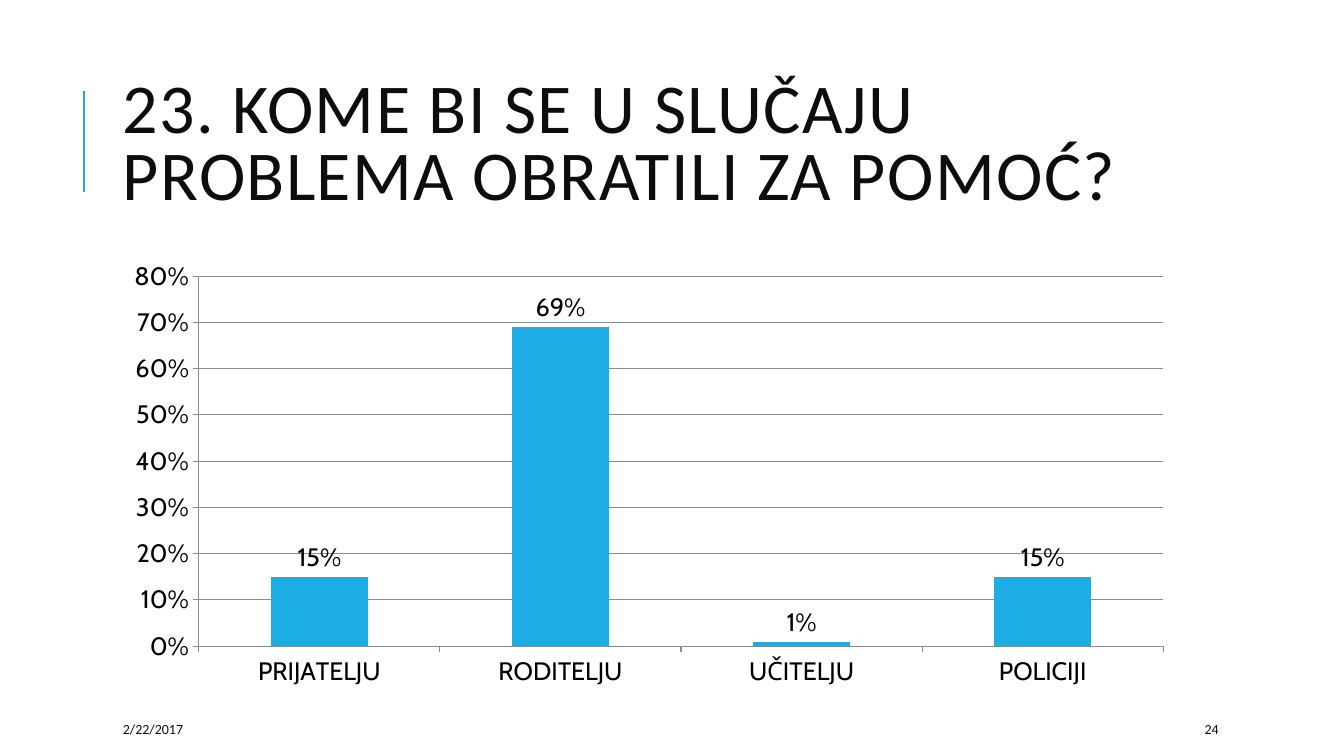
from dataclasses import dataclass

from pptx import Presentation
from pptx.chart.data import CategoryChartData
from pptx.dml.color import RGBColor
from pptx.enum.chart import XL_CHART_TYPE as ChartType
from pptx.enum.chart import XL_LABEL_POSITION as LabelPosition
from pptx.enum.chart import XL_TICK_MARK as TickMark
from pptx.enum.shapes import MSO_CONNECTOR as Connector
from pptx.enum.text import MSO_ANCHOR as Anchor
from pptx.oxml.ns import qn
from pptx.slide import Slide
from pptx.util import Inches, Pt

ACCENT = "1CADE4"
TEXT = "0D0D0D"
CHART_TEXT = "000000"
GRID = "8B8B8B"
LEFT = 1.12
CONTENT_WIDTH = 10.63
ANSWERS = {"PRIJATELJU": 0.15, "RODITELJU": 0.69, "UČITELJU": 0.01, "POLICIJI": 0.15}


@dataclass
class Label:
    text: str
    left: float
    top: float
    width: float
    height: float
    size: float
    line_spacing: float = 1.0
    tracking: int = 0  # hundredths of a point


LABELS = [
    Label("23. KOME BI SE U SLUČAJU PROBLEMA OBRATILI ZA POMOĆ?",
          LEFT, 0.64, CONTENT_WIDTH, 1.64, 50, 0.8, 100),
    Label("2/22/2017", LEFT, 7.08, 2.36, 0.3, 10),
    Label("24", 11.85, 7.08, 1.06, 0.3, 10),
]


def color(value: str) -> RGBColor:
    return RGBColor.from_string(value)


def add_label(slide: Slide, label: Label) -> None:
    shape = slide.shapes.add_textbox(Inches(label.left), Inches(label.top),
                                     Inches(label.width), Inches(label.height))
    frame = shape.text_frame
    frame.word_wrap = True
    frame.vertical_anchor = Anchor.MIDDLE
    frame.text = label.text
    paragraph = frame.paragraphs[0]
    paragraph.line_spacing = label.line_spacing
    run = paragraph.runs[0]
    run.font.name = "Calibri"
    run.font.size = Pt(label.size)
    run.font.color.rgb = color(TEXT)
    if label.tracking:
        run.font._element.set("spc", str(label.tracking))


def add_accent_line(slide: Slide) -> None:
    line = slide.shapes.add_connector(Connector.STRAIGHT, Inches(0.83), Inches(1.9),
                                      Inches(0.83), Inches(0.9))
    line.line.color.rgb = color(ACCENT)
    line.line.width = Pt(1.5)
    properties = line._element.spPr
    properties.append(properties.makeelement(qn("a:effectLst"), {}))


def add_answer_chart(slide: Slide) -> None:
    data = CategoryChartData(number_format="0%")
    data.categories = list(ANSWERS)
    data.add_series("Series 1", list(ANSWERS.values()))
    chart = slide.shapes.add_chart(ChartType.COLUMN_CLUSTERED, Inches(LEFT), Inches(2.5),
                                   Inches(CONTENT_WIDTH), Inches(4.4), data).chart
    chart.has_legend = False
    chart.has_title = False
    chart.font.name = "Cabin"
    chart.font.size = Pt(18)
    chart.font.color.rgb = color(CHART_TEXT)

    # Axes and gridlines
    value_axis = chart.value_axis
    value_axis.minimum_scale = 0
    value_axis.maximum_scale = 0.8
    value_axis.major_unit = 0.1
    value_axis.has_major_gridlines = True
    value_axis.tick_labels.number_format = "0%"
    value_axis.tick_labels.number_format_is_linked = False
    for axis in (chart.category_axis, value_axis):
        axis.major_tick_mark = TickMark.OUTSIDE
        axis.minor_tick_mark = TickMark.NONE
    for part in (chart.category_axis, value_axis, value_axis.major_gridlines):
        part.format.line.color.rgb = color(GRID)
        part.format.line.width = Pt(0.75)

    # Columns and their labels
    plot = chart.plots[0]
    plot.vary_by_categories = False
    plot.gap_width = 150
    series = plot.series[0]
    series.format.fill.solid()
    series.format.fill.fore_color.rgb = color(ACCENT)
    labels = series.data_labels
    labels.show_value = True
    labels.number_format = "0%"
    labels.number_format_is_linked = False
    labels.position = LabelPosition.OUTSIDE_END


def main() -> None:
    presentation = Presentation()
    presentation.slide_width = Inches(13.33)
    presentation.slide_height = Inches(7.5)
    slide = presentation.slides.add_slide(presentation.slide_layouts[6])
    add_accent_line(slide)
    add_answer_chart(slide)
    for label in LABELS:
        add_label(slide, label)
    presentation.save("out.pptx")


if __name__ == "__main__":
    main()
